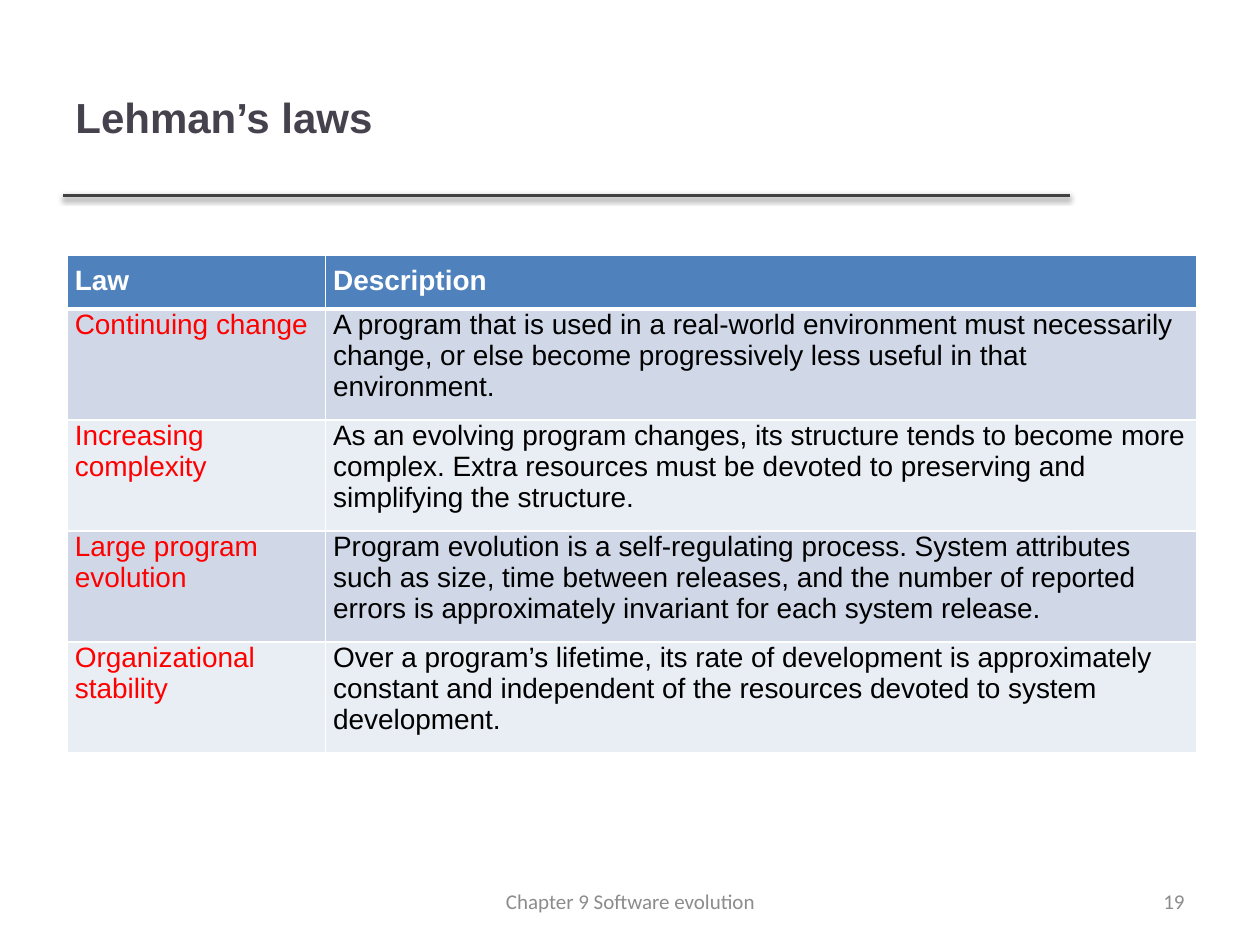
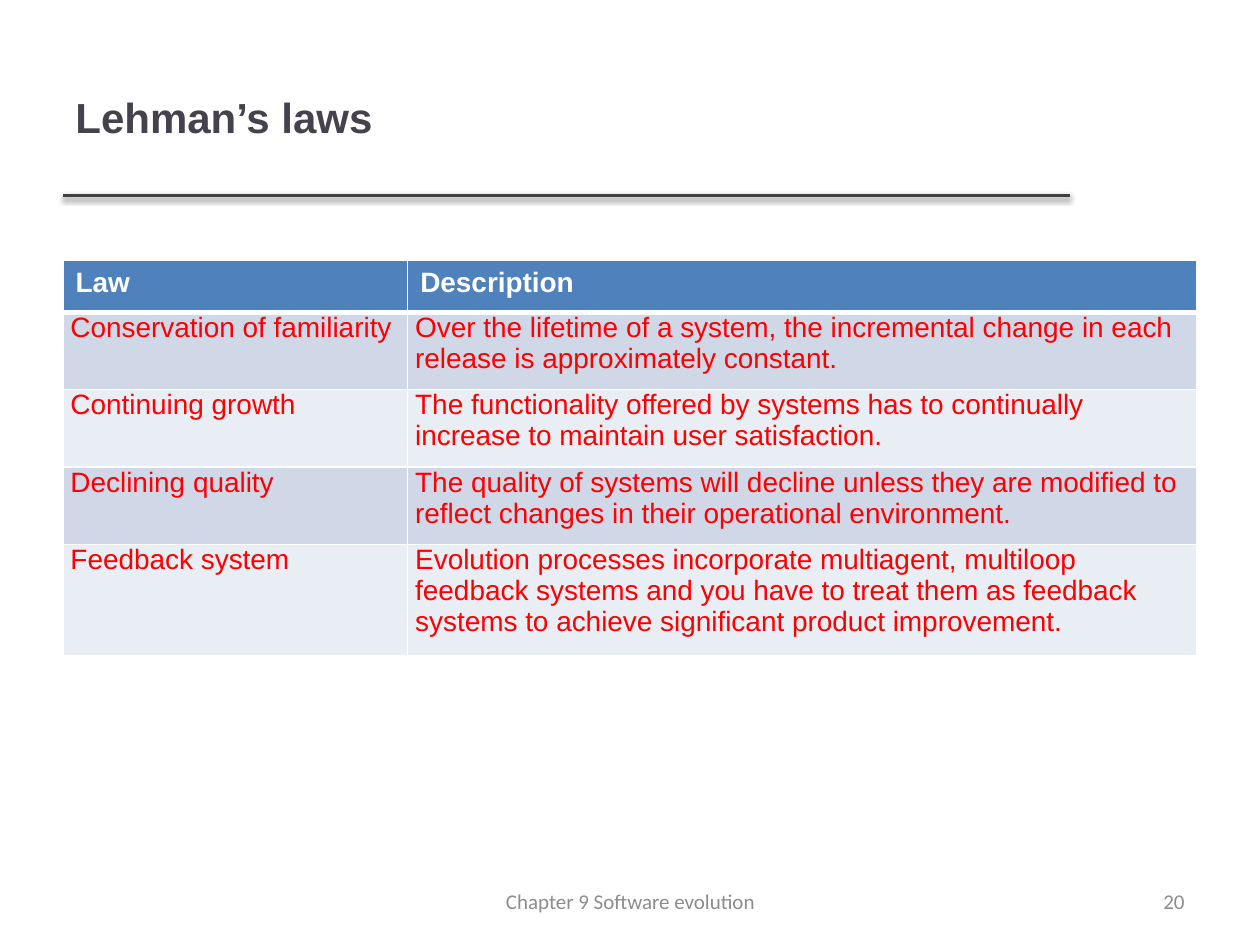
from dataclasses import dataclass
from typing import NamedTuple

from lxml.etree import SubElement
from pptx import Presentation
from pptx.dml.color import RGBColor
from pptx.enum.shapes import MSO_CONNECTOR as Connector
from pptx.enum.text import MSO_ANCHOR as Anchor, PP_ALIGN as Align
from pptx.oxml import parse_xml
from pptx.oxml.ns import nsdecls, qn
from pptx.slide import Slide
from pptx.table import _Cell as Cell
from pptx.util import Pt


@dataclass(frozen=True)
class Theme:
    heading: str = "46424D"
    rule: str = "404040"
    footer: str = "8C8C8C"
    header_fill: str = "4F81BD"
    bands: tuple[str, str] = ("D0D8E8", "E9EDF4")
    white: str = "FFFFFF"
    black: str = "000000"
    red: str = "FF0000"
    body_font: str = "Arial"
    footer_font: str = "Calibri"
    title_size: float = 24
    table_size: float = 16
    footer_size: float = 12
    thin_border: float = 1
    header_border: float = 3


THEME = Theme()
HEADER_HEIGHT = 29.5
LINE_HEIGHT = 17.8
BOTTOM_INSET = 5.8
SPACE_AFTER = 6


class TextStyle(NamedTuple):
    font: str
    size: float
    color: str
    bold: bool = False


class Box(NamedTuple):
    left: float
    top: float
    width: float
    height: float


class Insets(NamedTuple):
    left: float
    top: float
    right: float
    bottom: float


class Law(NamedTuple):
    name: str
    description: str
    lines: int


@dataclass(frozen=True)
class LawSlide:
    page: int
    left: float
    top: float
    columns: tuple[float, float]
    header_insets: Insets
    header_space_after: float
    description_color: str
    laws: tuple[Law, ...]


BODY_INSETS = Insets(4.3, 0, 4.3, BOTTOM_INSET)
TITLE_BOX = Box(36, 21.6, 574.6, 90)
CHAPTER_BOX = Box(246.2, 500.4, 228.2, 28.8)
PAGE_BOX = Box(516.2, 500.4, 167.8, 28.8)
TITLE_STYLE = TextStyle(THEME.body_font, THEME.title_size, THEME.heading, True)
FOOTER_STYLE = TextStyle(THEME.footer_font, THEME.footer_size, THEME.footer)
HEADER_STYLE = TextStyle(THEME.body_font, THEME.table_size, THEME.white, True)
LAW_STYLE = TextStyle(THEME.body_font, THEME.table_size, THEME.red)

LAW_SLIDES = (
    LawSlide(
        19, 38.5, 145.8, (147.6, 497.5), Insets(4.3, 5.8, 4.3, 5.8), SPACE_AFTER, THEME.black,
        (
            Law("Continuing change",
                "A program that is used in a real-world environment must necessarily change, "
                "or else become progressively less useful in that environment.", 3),
            Law("Increasing complexity",
                "As an evolving program changes, its structure tends to become more complex. "
                "Extra resources must be devoted to preserving and simplifying the structure.", 3),
            Law("Large program evolution",
                "Program evolution is a self-regulating process. System attributes such as size, "
                "time between releases, and the number of reported errors is approximately "
                "invariant for each system release.", 3),
            Law("Organizational stability",
                "Over a program’s lifetime, its rate of development is approximately constant "
                "and independent of the resources devoted to system development.", 3),
        ),
    ),
    LawSlide(
        20, 36, 149, (197, 451), Insets(7.2, 3.6, 7.2, 3.6), 0, THEME.red,
        (
            Law("Conservation of familiarity",
                "Over the lifetime of a system, the incremental change in each release is "
                "approximately constant.", 2),
            Law("Continuing growth",
                "The functionality offered by systems has to continually increase to maintain "
                "user satisfaction.", 2),
            Law("Declining quality",
                "The quality of systems will decline unless they are modified to reflect changes "
                "in their operational environment.", 2),
            Law("Feedback system",
                "Evolution processes incorporate multiagent, multiloop feedback systems and you "
                "have to treat them as feedback systems to achieve significant product "
                "improvement.", 3),
        ),
    ),
)


def style_paragraph(paragraph, style: TextStyle) -> None:
    font = paragraph.font
    font.name = style.font
    font.size = Pt(style.size)
    font.bold = style.bold
    font.color.rgb = RGBColor.from_string(style.color)


def add_label(slide: Slide, box: Box, text: str, style: TextStyle, align: Align) -> None:
    frame = slide.shapes.add_textbox(*map(Pt, box)).text_frame
    frame.word_wrap = True
    frame.vertical_anchor = Anchor.MIDDLE
    paragraph = frame.paragraphs[0]
    paragraph.text = text
    paragraph.alignment = align
    style_paragraph(paragraph, style)


def add_title_rule(slide: Slide) -> None:
    """Draw the line under the title, with its soft shadow below."""
    rule = slide.shapes.add_connector(
        Connector.STRAIGHT, Pt(36), Pt(111.6), Pt(611.3), Pt(111.6))
    rule.line.color.rgb = RGBColor.from_string(THEME.rule)
    rule.line.width = Pt(2)
    properties = rule.line._get_or_add_ln().getparent()
    properties.append(parse_xml(
        f'<a:effectLst {nsdecls("a")}>'
        f'<a:outerShdw blurRad="{Pt(3.1)}" dist="{Pt(1.6)}" dir="5400000" rotWithShape="0">'
        f'<a:srgbClr val="{THEME.black}"><a:alpha val="38000"/></a:srgbClr>'
        '</a:outerShdw></a:effectLst>'))


def set_borders(cell: Cell, top: float, bottom: float) -> None:
    widths = {"lnL": THEME.thin_border, "lnR": THEME.thin_border, "lnT": top, "lnB": bottom}
    properties = cell._tc.get_or_add_tcPr()
    for position, (side, width) in enumerate(widths.items()):
        border = SubElement(properties, qn(f"a:{side}"), w=str(Pt(width)))
        fill = SubElement(border, qn("a:solidFill"))
        SubElement(fill, qn("a:srgbClr"), val=THEME.white)
        properties.insert(position, border)


def fill_cell(cell: Cell, text: str, style: TextStyle, fill: str,
              insets: Insets, space_after: float) -> None:
    cell.fill.solid()
    cell.fill.fore_color.rgb = RGBColor.from_string(fill)
    cell.margin_left, cell.margin_top, cell.margin_right, cell.margin_bottom = map(Pt, insets)
    paragraph = cell.text_frame.paragraphs[0]
    paragraph.text = text
    paragraph.space_after = Pt(space_after)
    style_paragraph(paragraph, style)


def add_law_table(slide: Slide, content: LawSlide) -> None:
    heights = [HEADER_HEIGHT] + [law.lines * LINE_HEIGHT + BOTTOM_INSET for law in content.laws]
    table = slide.shapes.add_table(
        len(heights), len(content.columns), Pt(content.left), Pt(content.top),
        Pt(sum(content.columns)), Pt(sum(heights))).table
    for column, width in zip(table.columns, content.columns):
        column.width = Pt(width)
    for row, height in zip(table.rows, heights):
        row.height = Pt(height)

    for cell, heading in zip(table.rows[0].cells, ("Law", "Description")):
        fill_cell(cell, heading, HEADER_STYLE, THEME.header_fill,
                  content.header_insets, content.header_space_after)
        set_borders(cell, THEME.thin_border, THEME.header_border)

    styles = (LAW_STYLE, LAW_STYLE._replace(color=content.description_color))
    for index, law in enumerate(content.laws):
        top_border = THEME.thin_border if index else THEME.header_border
        texts = (law.name, law.description)
        for cell, text, style in zip(table.rows[index + 1].cells, texts, styles):
            fill_cell(cell, text, style, THEME.bands[index % 2], BODY_INSETS, SPACE_AFTER)
            set_borders(cell, top_border, THEME.thin_border)


def main() -> None:
    deck = Presentation()
    deck.slide_width, deck.slide_height = Pt(720), Pt(540)
    for content in LAW_SLIDES:
        slide = deck.slides.add_slide(deck.slide_layouts[6])
        add_title_rule(slide)
        add_label(slide, TITLE_BOX, "Lehman’s laws", TITLE_STYLE, Align.LEFT)
        add_law_table(slide, content)
        add_label(slide, PAGE_BOX, str(content.page), FOOTER_STYLE, Align.RIGHT)
        add_label(slide, CHAPTER_BOX, "Chapter 9 Software evolution", FOOTER_STYLE, Align.CENTER)
    deck.save("out.pptx")


if __name__ == "__main__":
    main()
